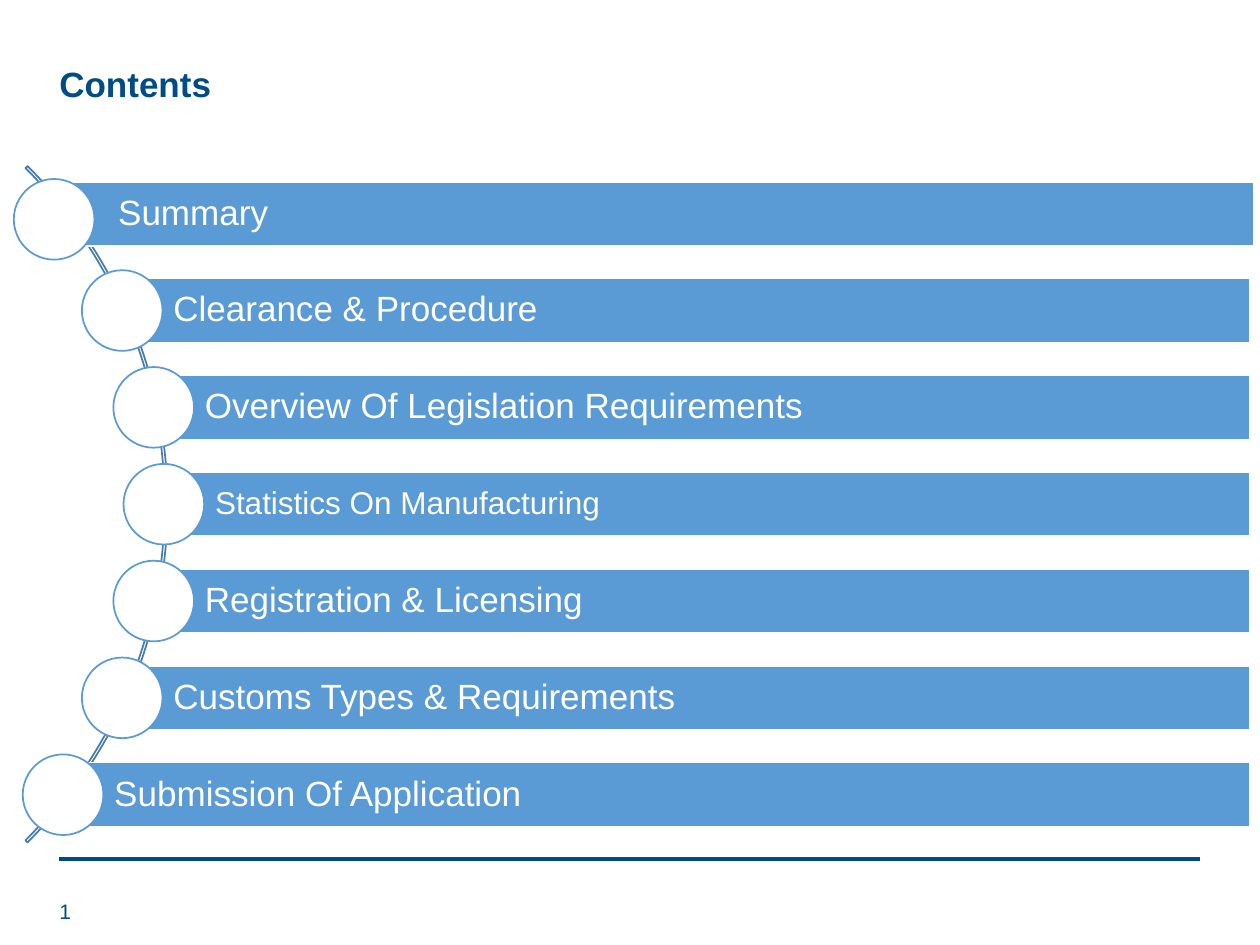
from pptx import Presentation
from pptx.util import Pt
from pptx.dml.color import RGBColor
from pptx.enum.shapes import MSO_CONNECTOR, MSO_SHAPE
from pptx.enum.text import MSO_ANCHOR, PP_ALIGN
from pptx.oxml.ns import qn
from lxml.etree import SubElement

NAVY, BLUE, ARC, WHITE = "004C85", "5B9BD5", "497CAB", "FFFFFF"
BAR_H, CIRCLE_D = 36.7, 46.1
ROWS = [
    ("Summary", 38.2, 7.9, 20),
    ("Clearance & Procedure", 69.8, 46.8, 20),
    ("Overview Of Legislation Requirements", 87.8, 64.8, 20),
    ("Statistics On Manufacturing", 93.6, 70.6, 18),
    ("Registration & Licensing", 87.8, 64.8, 20),
    ("Customs Types & Requirements", 69.8, 46.8, 20),
    ("Submission Of Application", 36, 13, 20),
]


def rgb(color):
    return RGBColor.from_string(color)


def write(s, text, size, color, bold=False, anchor=MSO_ANCHOR.MIDDLE, spacing=0.9):
    tf = s.text_frame
    tf.word_wrap = True
    tf.vertical_anchor = anchor
    tf.text = text
    p = tf.paragraphs[0]
    p.alignment = PP_ALIGN.LEFT
    p.line_spacing = spacing
    font = p.runs[0].font
    font.name, font.size, font.bold = "Arial", Pt(size), bold
    font.color.rgb = rgb(color)


def add_shape(slide, kind, box, line, fill=None):
    s = slide.shapes.add_shape(kind, *map(Pt, box))
    s.shadow.inherit = False
    if fill:
        s.fill.solid()
        s.fill.fore_color.rgb = rgb(fill)
    else:
        s.fill.background()
    s.line.color.rgb = rgb(line)
    s.line.width = Pt(1)
    return s


def add_title(slide, box):
    s = slide.shapes.add_textbox(*map(Pt, box))
    write(s, "Contents", 20, NAVY, bold=True, anchor=MSO_ANCHOR.TOP)


def add_footer(slide, left, top, width):
    rule = slide.shapes.add_connector(
        MSO_CONNECTOR.STRAIGHT, Pt(left), Pt(top), Pt(left + width), Pt(top))
    SubElement(rule._element.spPr, qn("a:effectLst"))
    rule.line.color.rgb = rgb(NAVY)
    rule.line.width = Pt(2)
    number = slide.shapes.add_textbox(
        Pt(left - 7.2), Pt(top + 15), Pt(162), Pt(28.8))
    write(number, "1", 12, NAVY, spacing=1)


def add_row(slide, row, top, right, circle_top):
    label, bar_left, circle_left, size = row
    bar = add_shape(slide, MSO_SHAPE.RECTANGLE,
                    (bar_left, top, right - bar_left, BAR_H), WHITE, BLUE)
    write(bar, label, size, WHITE)
    tf = bar.text_frame
    tf.margin_left = Pt(29.3)
    tf.margin_top = tf.margin_right = tf.margin_bottom = Pt(4)
    add_shape(slide, MSO_SHAPE.OVAL,
              (circle_left, circle_top, CIRCLE_D, CIRCLE_D), BLUE, WHITE)


def add_contents(slide, top, right, pitch):
    arc_d = 546.5
    arc_top = top + 3 * pitch + BAR_H / 2 - arc_d / 2
    arc = add_shape(slide, MSO_SHAPE.BLOCK_ARC, (-450.7, arc_top, arc_d, arc_d), ARC)
    for i, value in enumerate((189, 27, 0.003)):
        arc.adjustments[i] = value
    for i, row in enumerate(ROWS):
        y = top + i * pitch
        if i == 0:
            add_row(slide, row, y, right + 2, y - 1.5)
        else:
            add_row(slide, row, y, right, y - 4.7)


def main():
    prs = Presentation()
    prs.slide_width, prs.slide_height = Pt(720), Pt(540)
    slide = prs.slides.add_slide(prs.slide_layouts[6])
    add_footer(slide, 34, 491, 652)
    add_title(slide, (26.8, 34.6, 620.6, 41.8))
    add_contents(slide, 103.8, 714.4, 55.33)
    prs.save("out.pptx")


if __name__ == "__main__":
    main()
